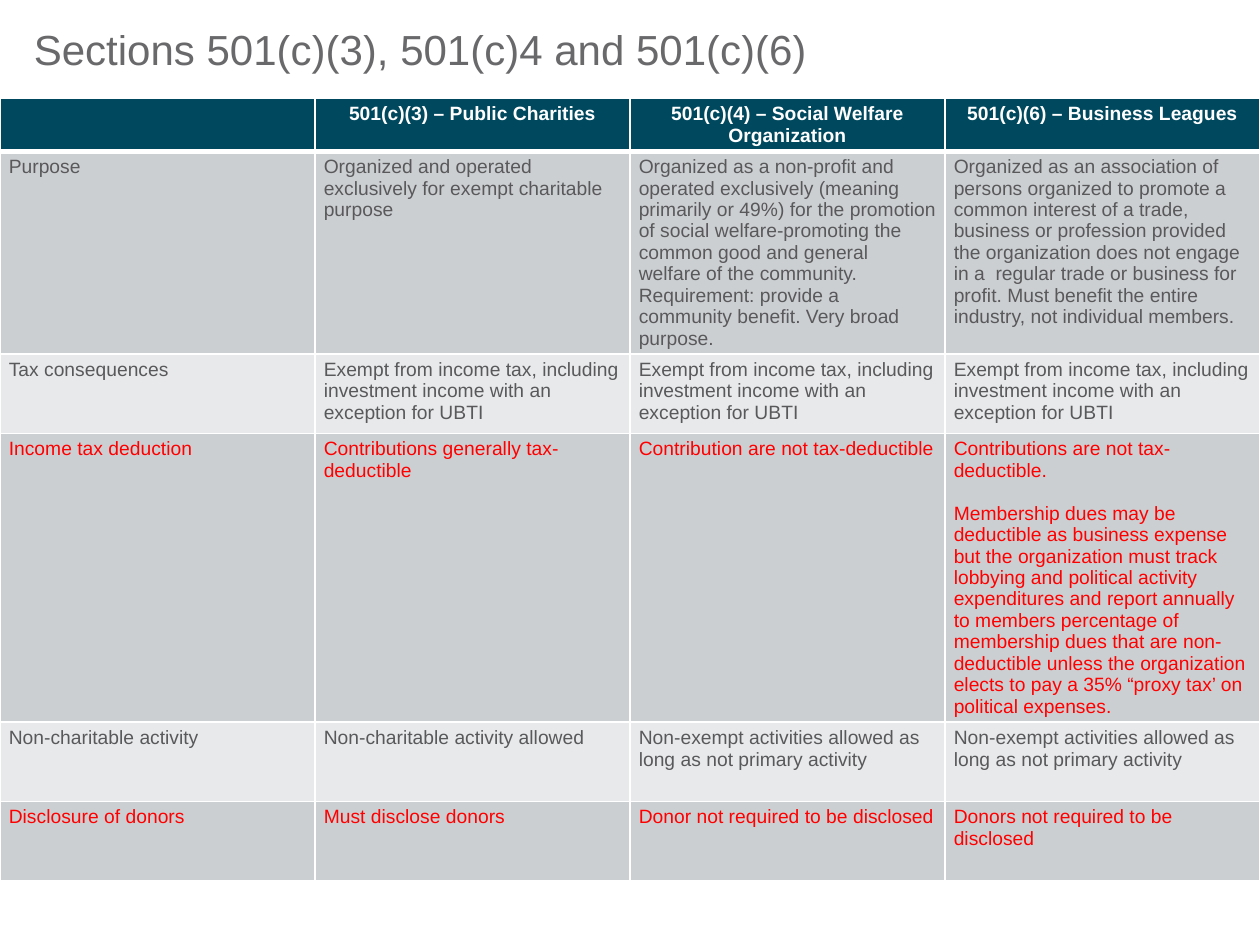
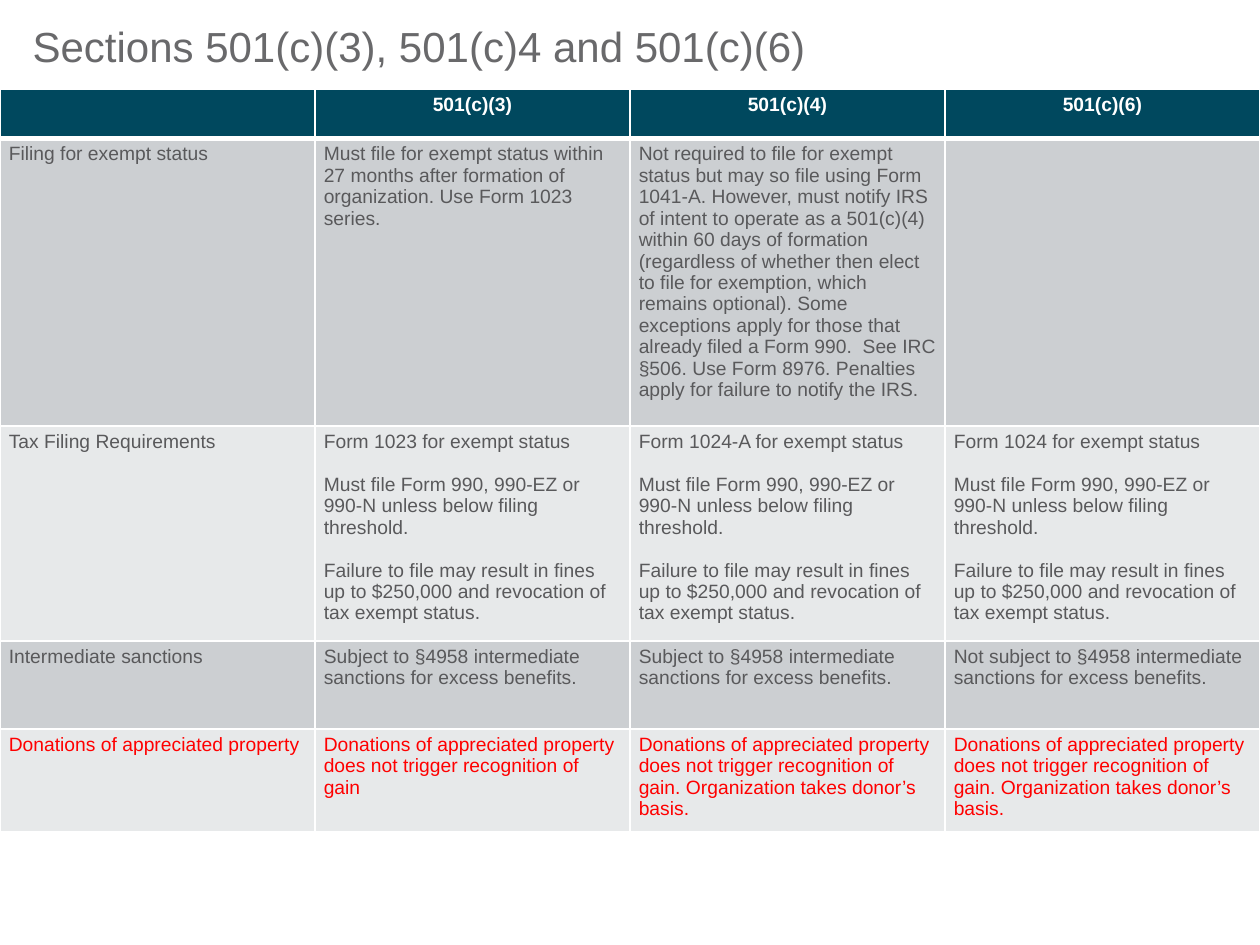
from dataclasses import dataclass

from lxml.etree import SubElement
from pptx import Presentation
from pptx.dml.color import RGBColor
from pptx.enum.text import MSO_AUTO_SIZE, PP_ALIGN
from pptx.oxml.ns import qn
from pptx.slide import Slide
from pptx.table import _Cell as Cell
from pptx.util import Inches, Pt

TEAL = RGBColor(0x00, 0x48, 0x5E)
WHITE = RGBColor(0xFF, 0xFF, 0xFF)
GRAY = RGBColor(0x59, 0x59, 0x5B)
RED = RGBColor(0xFF, 0x00, 0x00)
DARK_BAND = RGBColor(0xCC, 0xCF, 0xD2)
LIGHT_BAND = RGBColor(0xE7, 0xE9, 0xEA)

FONT = "Arial"
TITLE = "Sections 501(c)(3), 501(c)4 and 501(c)(6)"
TITLE_OPACITY = 90
SLIDE_WIDTH = 10
COLUMN_COUNT = 4
BORDER = Pt(1)
HEADER_BORDER = Pt(3)
PARAGRAPH_GAP = Pt(12.25)


@dataclass(frozen=True)
class Row:
    height: float
    cells: tuple[str, ...]
    highlighted: bool = False


@dataclass(frozen=True)
class ComparisonSlide:
    title_left: float
    title_top: float
    title_width: float
    table_top: float
    rows: tuple[Row, ...]


INCOME_TAX = "Exempt from income tax, including investment income with an exception for UBTI"
NON_EXEMPT = "Non-exempt activities allowed as long as not primary activity"
FILING_RULES = (
    "Must file Form 990, 990-EZ or 990-N unless below filing threshold.\n"
    "Failure to file may result in fines up to $250,000 and revocation of tax exempt status."
)
SANCTIONS = "ubject to §4958 intermediate sanctions for excess benefits."
DONATIONS = "Donations of appreciated property"
NO_GAIN = f"{DONATIONS} does not trigger recognition of gain"
DONOR_BASIS = f"{NO_GAIN}. Organization takes donor’s basis."

SLIDES = (
    ComparisonSlide(0.17, 0.14, 6.71, 0.78, (
        Row(0.42, (
            "",
            "501(c)(3) – Public Charities",
            "501(c)(4) – Social Welfare Organization",
            "501(c)(6) – Business Leagues",
        )),
        Row(1.48, (
            "Purpose",
            "Organized and operated exclusively for exempt charitable purpose",
            "Organized as a non-profit and operated exclusively (meaning primarily or 49%) "
            "for the promotion of social welfare-promoting the common good and general "
            "welfare of the community. Requirement: provide a community benefit. "
            "Very broad purpose.",
            "Organized as an association of persons organized to promote a common interest "
            "of a trade, business or profession provided the organization does not engage "
            "in a  regular trade or business for profit. Must benefit the entire industry, "
            "not individual members.",
        )),
        Row(0.63, ("Tax consequences", INCOME_TAX, INCOME_TAX, INCOME_TAX)),
        Row(2, (
            "Income tax deduction",
            "Contributions generally tax-deductible",
            "Contribution are not tax-deductible",
            "Contributions are not tax-deductible.\n"
            "Membership dues may be deductible as business expense but the organization "
            "must track lobbying and political activity expenditures and report annually "
            "to members percentage of membership dues that are non-deductible unless the "
            "organization elects to pay a 35% “proxy tax’ on political expenses.",
        ), highlighted=True),
        Row(0.63, (
            "Non-charitable activity",
            "Non-charitable activity allowed",
            NON_EXEMPT,
            NON_EXEMPT,
        )),
        Row(0.63, (
            "Disclosure of donors",
            "Must disclose donors",
            "Donor not required to be disclosed",
            "Donors not required to be disclosed",
        ), highlighted=True),
    )),
    ComparisonSlide(0.16, 0.11, 7.01, 0.71, (
        Row(0.39, ("", "501(c)(3)", "501(c)(4)", "501(c)(6)")),
        Row(2.17, (
            "Filing for exempt status",
            "Must file for exempt status within 27 months after formation of organization. "
            "Use Form 1023 series.",
            "Not required to file for exempt status but may so file using Form 1041-A. "
            "However, must notify IRS of intent to operate as a 501(c)(4) within 60 days of "
            "formation (regardless of whether then elect to file for exemption, which "
            "remains optional). Some exceptions apply for those that already filed a "
            "Form 990.  See IRC §506. Use Form 8976. Penalties apply for failure to notify "
            "the IRS.",
            "",
        )),
        Row(1.65, (
            "Tax Filing Requirements",
            f"Form 1023 for exempt status\n{FILING_RULES}",
            f"Form 1024-A for exempt status\n{FILING_RULES}",
            f"Form 1024 for exempt status\n{FILING_RULES}",
        )),
        Row(0.7, (
            "Intermediate sanctions",
            f"S{SANCTIONS}",
            f"S{SANCTIONS}",
            f"Not s{SANCTIONS}",
        )),
        Row(0.7, (DONATIONS, NO_GAIN, DONOR_BASIS, DONOR_BASIS), highlighted=True),
    )),
)


def add_title(slide: Slide, content: ComparisonSlide) -> None:
    shape = slide.shapes.add_textbox(
        Inches(content.title_left), Inches(content.title_top),
        Inches(content.title_width), Inches(0.5),
    )
    text_frame = shape.text_frame
    text_frame.word_wrap = True
    text_frame.auto_size = MSO_AUTO_SIZE.SHAPE_TO_FIT_TEXT
    text_frame.text = TITLE
    run = text_frame.paragraphs[0].runs[0]
    run.font.name = FONT
    run.font.size = Pt(24)
    run.font.color.rgb = GRAY
    for color in run._r.iter(qn("a:srgbClr")):
        SubElement(color, qn("a:alpha"), val=str(TITLE_OPACITY * 1000))


def set_borders(cell: Cell, top: int, bottom: int) -> None:
    properties = cell._tc.get_or_add_tcPr()
    widths = {"a:lnL": BORDER, "a:lnR": BORDER, "a:lnT": top, "a:lnB": bottom}
    for position, (side, width) in enumerate(widths.items()):
        line = SubElement(properties, qn(side), w=str(int(width)))
        fill = SubElement(line, qn("a:solidFill"))
        SubElement(fill, qn("a:srgbClr"), val=str(WHITE))
        properties.insert(position, line)


def fill_cell(cell: Cell, text: str, row_index: int, highlighted: bool) -> None:
    is_header = row_index == 0
    band = DARK_BAND if row_index % 2 else LIGHT_BAND
    cell.fill.solid()
    cell.fill.fore_color.rgb = TEAL if is_header else band
    set_borders(
        cell,
        top=HEADER_BORDER if row_index == 1 else BORDER,
        bottom=HEADER_BORDER if is_header else BORDER,
    )
    cell.margin_left = cell.margin_right = Inches(0.07)
    cell.margin_top = cell.margin_bottom = Inches(0.04)
    cell.text_frame.text = text
    for index, paragraph in enumerate(cell.text_frame.paragraphs):
        paragraph.alignment = PP_ALIGN.CENTER if is_header else PP_ALIGN.LEFT
        if index:
            paragraph.space_before = PARAGRAPH_GAP
        for run in paragraph.runs:
            run.font.name = FONT
            run.font.size = Pt(11)
            run.font.bold = is_header
            run.font.color.rgb = WHITE if is_header else RED if highlighted else GRAY


def add_comparison_table(slide: Slide, content: ComparisonSlide) -> None:
    table = slide.shapes.add_table(
        len(content.rows), COLUMN_COUNT, Inches(0), Inches(content.table_top),
        Inches(SLIDE_WIDTH), Inches(sum(row.height for row in content.rows)),
    ).table
    for row_index, row in enumerate(content.rows):
        table.rows[row_index].height = Inches(row.height)
        for column_index, text in enumerate(row.cells):
            fill_cell(table.cell(row_index, column_index), text, row_index, row.highlighted)


def main() -> None:
    presentation = Presentation()
    presentation.slide_width = Inches(SLIDE_WIDTH)
    presentation.slide_height = Inches(7.5)
    for content in SLIDES:
        slide = presentation.slides.add_slide(presentation.slide_layouts[6])
        add_comparison_table(slide, content)
        add_title(slide, content)
    presentation.save("out.pptx")


if __name__ == "__main__":
    main()
